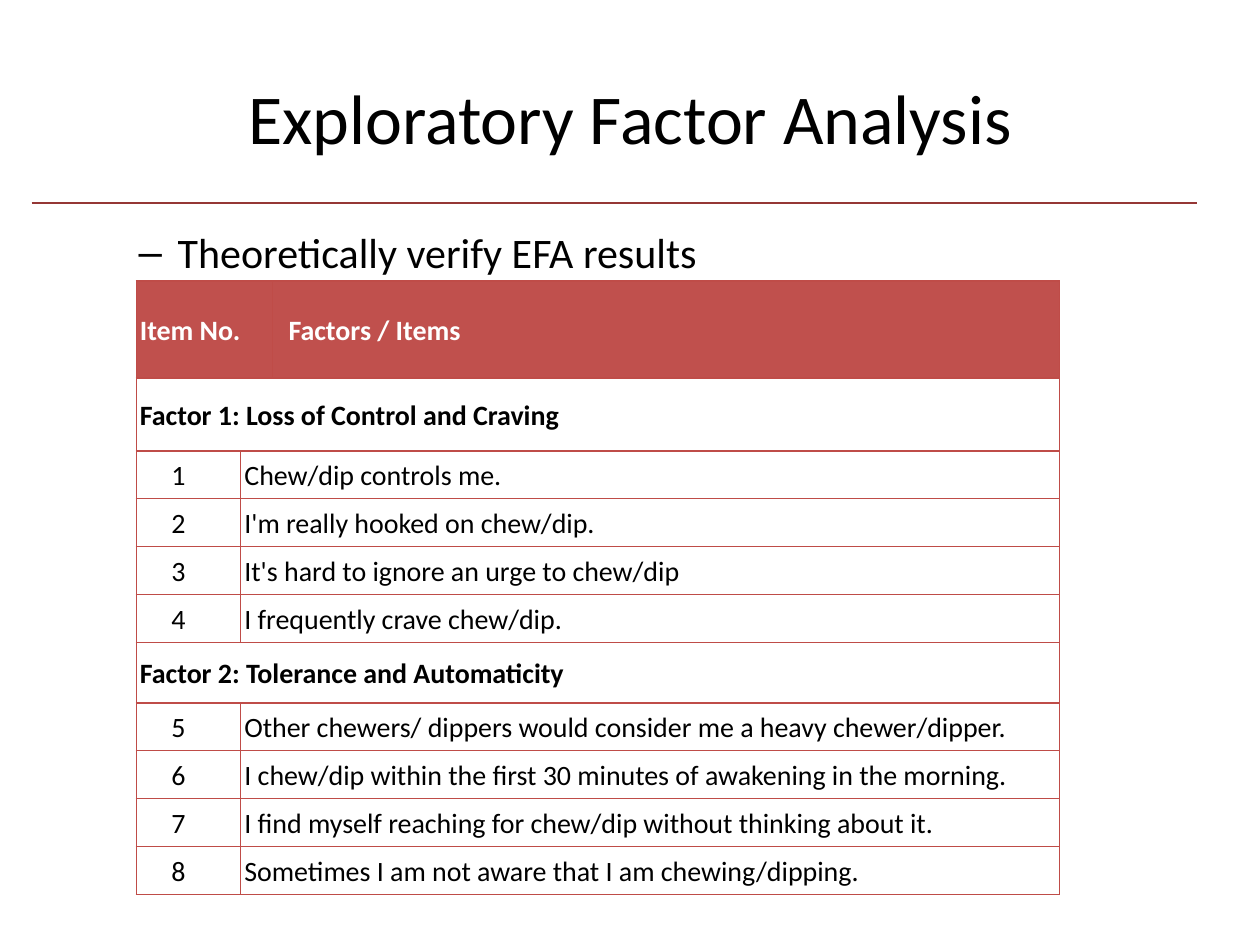
from typing import NamedTuple

from pptx import Presentation
from pptx import util as u
from pptx.dml import color
from pptx.enum import shapes, text
from pptx.oxml import ns, xmlchemy

FONT = "Calibri"
BLACK, WHITE = "000000", "FFFFFF"
RULE, HEADER, BORDER = "953735", "C0504D", "BF4C48"
ITEM_HEIGHT = 0.38
COLUMNS = (0.83, 0.25, 6.25)


class Factor(NamedTuple):
    heading: str
    height: float
    items: tuple[str, ...]


FACTORS = (
    Factor("Factor 1: Loss of Control and Craving", 0.58, (
        "Chew/dip controls me.",
        "I'm really hooked on chew/dip.",
        "It's hard to ignore an urge to chew/dip",
        "I frequently crave chew/dip.",
    )),
    Factor("Factor 2: Tolerance and Automaticity", 0.48, (
        "Other chewers/ dippers would consider me a heavy chewer/dipper.",
        "I chew/dip within the first 30 minutes of awakening in the morning.",
        "I find myself reaching for chew/dip without thinking about it.",
        "Sometimes I am not aware that I am chewing/dipping.",
    )),
)


def rgb(value: str) -> color.RGBColor:
    return color.RGBColor.from_string(value)


def sub_element(parent, tag: str, **attributes: str):
    child = xmlchemy.OxmlElement(tag)
    for key, value in attributes.items():
        child.set(key, value)
    parent.append(child)
    return child


def place(shape, left: float, top: float, width: float, height: float) -> None:
    shape.left, shape.top = u.Inches(left), u.Inches(top)
    shape.width, shape.height = u.Inches(width), u.Inches(height)


def indent(paragraph, margin: float, first: float) -> None:
    properties = paragraph._p.get_or_add_pPr()
    properties.set("marL", str(u.Inches(margin)))
    properties.set("indent", str(u.Inches(first)))


def style(paragraph, size: float, fill: str = BLACK, bold: bool = False) -> None:
    for run in paragraph.runs:
        run.font.name, run.font.size = FONT, u.Pt(size)
        run.font.bold, run.font.color.rgb = bold, rgb(fill)


def finish_cell(cell, fill: str) -> None:
    """Give a cell its four borders, then its fill."""
    properties = cell._tc.get_or_add_tcPr()
    for side in ("a:lnL", "a:lnR", "a:lnT", "a:lnB"):
        line = sub_element(properties, side, w=str(u.Pt(0.75)))
        solid = sub_element(line, "a:solidFill")
        sub_element(solid, "a:srgbClr", val=BORDER)
    cell.fill.solid()
    cell.fill.fore_color.rgb = rgb(fill)


def write_cell(cell, words: str, ink: str = BLACK, bold: bool = False,
               first: float = 0) -> None:
    cell.vertical_anchor = text.MSO_ANCHOR.MIDDLE
    cell.margin_left = cell.margin_right = u.Inches(0.03)
    cell.margin_top = cell.margin_bottom = 0
    paragraph = cell.text_frame.paragraphs[0]
    paragraph.text = words
    paragraph.line_spacing = 1.07
    indent(paragraph, 0, first)
    style(paragraph, 16, ink, bold)


def add_factor_table(slide) -> None:
    heights = [0.77]
    for factor in FACTORS:
        heights += [factor.height] + [ITEM_HEIGHT] * len(factor.items)
    frame = slide.shapes.add_table(
        len(heights), len(COLUMNS), u.Inches(1.08), u.Inches(2.23),
        u.Inches(sum(COLUMNS)), u.Inches(sum(heights)))
    table = frame.table
    for column, width in zip(table.columns, COLUMNS):
        column.width = u.Inches(width)
    for index, height in enumerate(heights):
        table.rows[index].height = u.Inches(height)
        for cell in table.rows[index].cells:
            finish_cell(cell, WHITE if index else HEADER)

    # Header row
    table.cell(0, 0).merge(table.cell(0, 1))
    write_cell(table.cell(0, 0), "Item No.", WHITE, True)
    write_cell(table.cell(0, 2), "Factors / Items", WHITE, True, 0.1)

    # Each factor heading, followed by its numbered items
    row, number = 1, 1
    for factor in FACTORS:
        table.cell(row, 0).merge(table.cell(row, 2))
        write_cell(table.cell(row, 0), factor.heading, bold=True)
        row += 1
        for item in factor.items:
            table.cell(row, 1).merge(table.cell(row, 2))
            write_cell(table.cell(row, 0), str(number), first=0.25)
            write_cell(table.cell(row, 1), item)
            row, number = row + 1, number + 1


def main() -> None:
    deck = Presentation()
    deck.slide_width, deck.slide_height = u.Inches(10), u.Inches(7.5)
    slide = deck.slides.add_slide(deck.slide_layouts[1])

    # Rule under the title
    rule = slide.shapes.add_connector(
        shapes.MSO_CONNECTOR.STRAIGHT,
        u.Inches(0.25), u.Inches(1.61), u.Inches(9.5), u.Inches(1.61))
    rule.line.color.rgb, rule.line.width = rgb(RULE), u.Pt(1.5)
    sub_element(rule._element.find(ns.qn("p:spPr")), "a:effectLst")

    # Title
    title = slide.shapes.title
    place(title, 0.5, 0.3, 9, 1.25)
    title.text_frame.text = "Exploratory Factor Analysis"
    title.text_frame.vertical_anchor = text.MSO_ANCHOR.MIDDLE
    heading = title.text_frame.paragraphs[0]
    heading.alignment = text.PP_ALIGN.CENTER
    style(heading, 40)

    # Lead-in point
    body = slide.placeholders[1]
    place(body, 0.5, 1.75, 9, 4.95)
    body.text_frame.text = "Theoretically verify EFA results"
    point = body.text_frame.paragraphs[0]
    point.level = 1
    point.space_before = u.Pt(0)
    indent(point, 0.81, -0.31)
    sub_element(point._p.get_or_add_pPr(), "a:buChar", char="–")
    style(point, 24)

    add_factor_table(slide)
    deck.save("out.pptx")


if __name__ == "__main__":
    main()
